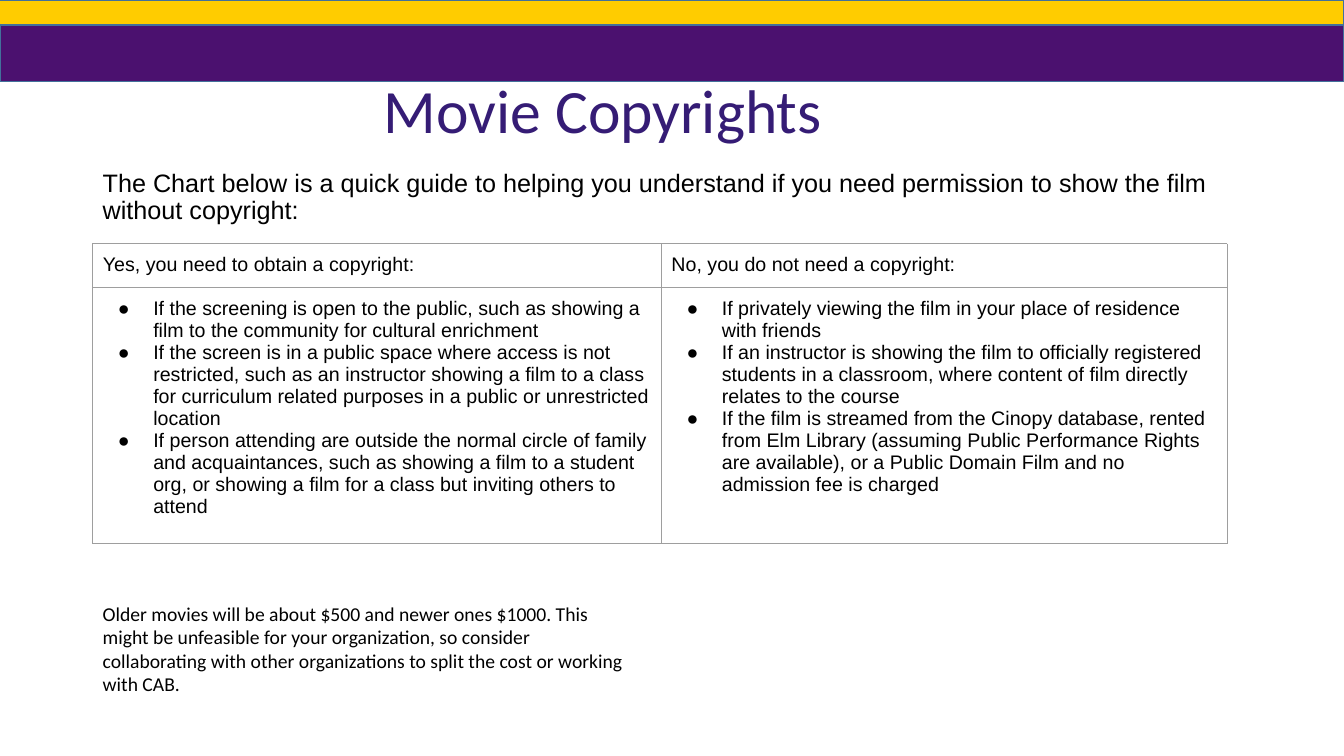
from lxml.etree import SubElement
from pptx import Presentation
from pptx.dml.color import RGBColor
from pptx.enum.shapes import MSO_SHAPE
from pptx.enum.text import MSO_ANCHOR
from pptx.oxml.ns import qn
from pptx.util import Inches, Pt

PURPLE = RGBColor(0x4B, 0x11, 0x6F)
GOLD = RGBColor(0xFF, 0xCC, 0x00)
BAND_EDGE = RGBColor(0x42, 0x71, 0x9B)
TITLE_VIOLET = RGBColor(0x35, 0x1C, 0x75)
BLACK = RGBColor(0, 0, 0)
GRID_GREY = RGBColor(0x9E, 0x9E, 0x9E)

LEFT = 0.92
COLUMN_WIDTHS = (5.64, 5.61)
ROW_HEIGHTS = (0.42, 2.38)

GUIDE = [
    ("Yes, you need to obtain a copyright:", [
        "If the screening is open to the public, such as showing a film to the "
        "community for cultural enrichment",
        "If the screen is in a public space where access is not restricted, such as "
        "an instructor showing a film to a class for curriculum related purposes in "
        "a public or unrestricted location",
        "If person attending are outside the normal circle of family and "
        "acquaintances, such as showing a film to a student org, or showing a film "
        "for a class but inviting others to attend",
    ]),
    ("No, you do not need a copyright:", [
        "If privately viewing the film in your place of residence with friends",
        "If an instructor is showing the film to officially registered students in a "
        "classroom, where content of film directly relates to the course",
        "If the film is streamed from the Cinopy database, rented from Elm Library "
        "(assuming Public Performance Rights are available), or a Public Domain Film "
        "and no admission fee is charged",
    ]),
]


def style(paragraph, size, font, color=BLACK):
    for run in paragraph.runs:
        run.font.size = Pt(size)
        run.font.name = font
        run.font.color.rgb = color


def add_band(slide, box, color):
    band = slide.shapes.add_shape(MSO_SHAPE.RECTANGLE, *map(Inches, box))
    band.shadow.inherit = False
    band.fill.solid()
    band.fill.fore_color.rgb = color
    band.line.color.rgb = BAND_EDGE
    band.line.width = Pt(1)


def add_text(slide, box, text, size, font, color=BLACK, inset=0.05,
             anchor=MSO_ANCHOR.TOP, line_spacing=None):
    frame = slide.shapes.add_textbox(*map(Inches, box)).text_frame
    frame.word_wrap = True
    frame.vertical_anchor = anchor
    frame.margin_top = frame.margin_bottom = Inches(inset)
    frame.text = text
    paragraph = frame.paragraphs[0]
    paragraph.line_spacing = line_spacing
    style(paragraph, size, font, color)


def add_bullet(paragraph):
    properties = paragraph._p.get_or_add_pPr()
    properties.set("marL", str(Inches(0.5)))
    properties.set("indent", str(-Inches(0.35)))
    color = SubElement(properties, qn("a:buClr"))
    SubElement(color, qn("a:srgbClr"), val=str(BLACK))
    SubElement(properties, qn("a:buFont"), typeface="Arial")
    SubElement(properties, qn("a:buChar"), char="●")


def add_borders(cell):
    properties = cell._tc.get_or_add_tcPr()
    for position, side in enumerate(("lnL", "lnR", "lnT", "lnB")):
        border = SubElement(properties, qn(f"a:{side}"), w=str(Pt(0.75)))
        properties.insert(position, border)
        fill = SubElement(border, qn("a:solidFill"))
        SubElement(fill, qn("a:srgbClr"), val=str(GRID_GREY))


def fill_cell(cell, lines, bulleted):
    cell.fill.background()
    add_borders(cell)
    cell.margin_left = cell.margin_right = Inches(0.1)
    cell.margin_top = cell.margin_bottom = Inches(0.1)
    cell.text_frame.text = "\n".join(lines)
    for paragraph in cell.text_frame.paragraphs:
        style(paragraph, 14, "Arial")
        if bulleted:
            add_bullet(paragraph)


def add_guide_table(slide, left, top):
    size = (sum(COLUMN_WIDTHS), sum(ROW_HEIGHTS))
    table = slide.shapes.add_table(
        len(ROW_HEIGHTS), len(GUIDE), *map(Inches, (left, top, *size))).table
    table.first_row = table.horz_banding = False
    for row, height in zip(table.rows, ROW_HEIGHTS):
        row.height = Inches(height)
    for index, (heading, cases) in enumerate(GUIDE):
        table.columns[index].width = Inches(COLUMN_WIDTHS[index])
        fill_cell(table.cell(0, index), [heading], bulleted=False)
        fill_cell(table.cell(1, index), cases, bulleted=True)


def build_copyright_slide(slide):
    add_band(slide, (0, 0.25, 13.33, 0.56), PURPLE)
    add_band(slide, (-0.01, 0, 13.34, 0.25), GOLD)
    add_text(slide, (3.71, 0.4, 6.06, 1.45), "Movie Copyrights", 44, "Calibri",
             TITLE_VIOLET, anchor=MSO_ANCHOR.MIDDLE, line_spacing=0.9)
    add_text(slide, (LEFT, 1.64, 11.7, 0.94),
             "The Chart below is a quick guide to helping you understand if you need "
             "permission to show the film without copyright:",
             18, "Arial", line_spacing=0.9)
    add_guide_table(slide, LEFT, 2.42)
    add_text(slide, (LEFT, 5.87, 5.37, 1.14),
             "Older movies will be about $500 and newer ones $1000. This might be "
             "unfeasible for your organization, so consider collaborating with other "
             "organizations to split the cost or working with CAB.",
             14, "Calibri", inset=0.1)


def main():
    presentation = Presentation()
    presentation.slide_width = Inches(13.33)
    presentation.slide_height = Inches(7.5)
    build_copyright_slide(presentation.slides.add_slide(presentation.slide_layouts[6]))
    presentation.save("out.pptx")


if __name__ == "__main__":
    main()
